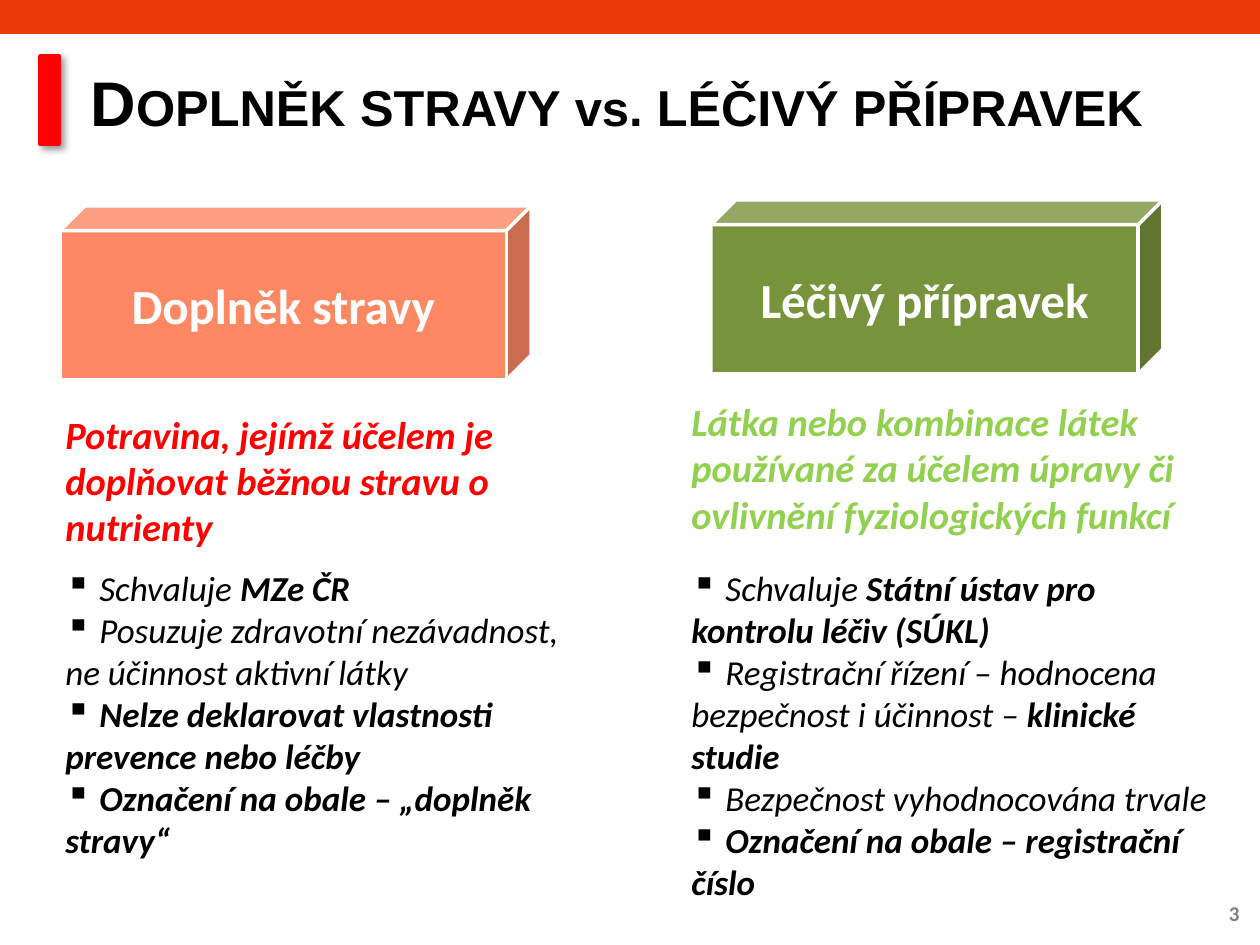
from lxml import etree
from pptx import Presentation
from pptx.dml.color import RGBColor
from pptx.enum.shapes import MSO_SHAPE as Shape
from pptx.enum.text import MSO_ANCHOR as Anchor, MSO_AUTO_SIZE as AutoSize, PP_ALIGN as Align
from pptx.oxml.ns import qn
from pptx.util import Emu, Pt

PX = 914400 / 126

BLACK = RGBColor(0x00, 0x00, 0x00)
WHITE = RGBColor(0xFF, 0xFF, 0xFF)
GRAY = RGBColor(0x80, 0x80, 0x80)
ORANGE = RGBColor(0xE9, 0x3C, 0x09)
RED = RGBColor(0xFF, 0x00, 0x00)
SALMON = RGBColor(0xFD, 0x88, 0x63)
OLIVE = RGBColor(0x77, 0x93, 0x3C)
LIME = RGBColor(0x92, 0xD0, 0x50)

# Each bullet is a plain part followed by a bold part.
SUPPLEMENT_BULLETS = [
    (" Schvaluje ", "MZe ČR"),
    (" Posuzuje zdravotní nezávadnost, ne účinnost aktivní látky", ""),
    (" ", "Nelze deklarovat vlastnosti prevence nebo léčby"),
    (" ", "Označení na obale – „doplněk stravy“"),
]
MEDICINE_BULLETS = [
    (" Schvaluje ", "Státní ústav pro kontrolu léčiv (SÚKL)"),
    (" Registrační řízení – hodnocena bezpečnost i účinnost – ", "klinické studie"),
    (" Bezpečnost vyhodnocována trvale", ""),
    (" ", "Označení na obale – registrační číslo"),
]


def px(*lengths):
    return [Emu(round(length * PX)) for length in lengths]


class SlideBuilder:
    def __init__(self, slide, font="Calibri"):
        self.slide = slide
        self.font = font

    def add_run(self, paragraph, text, size, color, bold=False, italic=False, font=None):
        run = paragraph.add_run()
        run.text = text
        run.font.name = font or self.font
        run.font.size = Pt(size)
        run.font.color.rgb = color
        run.font.bold = bold
        run.font.italic = italic
        return run

    def title(self, box, parts):
        """Fill the title from (text, size, small caps) parts."""
        shape = self.slide.shapes.title
        shape.left, shape.top, shape.width, shape.height = px(*box)
        frame = shape.text_frame
        frame.auto_size = AutoSize.NONE
        frame.vertical_anchor = Anchor.TOP
        paragraph = frame.paragraphs[0]
        paragraph.alignment = Align.LEFT
        for text, size, small_caps in parts:
            run = self.add_run(paragraph, text, size, BLACK, bold=True, font="Arial")
            if small_caps:
                run.font._element.set("cap", "small")

    def block(self, kind, box, fill, line=None):
        shape = self.slide.shapes.add_shape(kind, *px(*box))
        shape.shadow.inherit = False
        shape.fill.solid()
        shape.fill.fore_color.rgb = fill
        if line is None:
            shape.line.fill.background()
        else:
            shape.line.color.rgb = line
            shape.line.width = Pt(2)
        return shape

    def drop_shadow(self, shape):
        effects = shape._element.spPr.find(qn("a:effectLst"))
        shadow = etree.SubElement(
            effects, qn("a:outerShdw"), blurRad=str(Pt(4)), dist=str(Pt(3)),
            dir="2700000", algn="tl", rotWithShape="0")
        color = etree.SubElement(shadow, qn("a:srgbClr"), val="000000")
        etree.SubElement(color, qn("a:alpha"), val="40000")

    def cube(self, box, text, fill):
        shape = self.block(Shape.CUBE, box, fill, WHITE)
        shape.adjustments[0] = 0.142
        shape.text_frame.vertical_anchor = Anchor.MIDDLE
        paragraph = shape.text_frame.paragraphs[0]
        paragraph.alignment = Align.CENTER
        self.add_run(paragraph, text, 28, WHITE, bold=True)

    def text_frame(self, box):
        frame = self.slide.shapes.add_textbox(*px(*box)).text_frame
        frame.word_wrap = True
        return frame

    def definition(self, box, text, color):
        paragraph = self.text_frame(box).paragraphs[0]
        self.add_run(paragraph, text, 22, color, bold=True, italic=True)

    def bullets(self, box, items):
        frame = self.text_frame(box)
        for index, parts in enumerate(items):
            paragraph = frame.add_paragraph() if index else frame.paragraphs[0]
            properties = paragraph._p.get_or_add_pPr()
            etree.SubElement(properties, qn("a:buChar"), char="▪")
            for text, bold in zip(parts, (False, True)):
                if text:
                    self.add_run(paragraph, text, 20, BLACK, bold, italic=True)

    def page_number(self, box, text):
        frame = self.text_frame(box)
        frame.vertical_anchor = Anchor.MIDDLE
        paragraph = frame.paragraphs[0]
        paragraph.alignment = Align.RIGHT
        self.add_run(paragraph, text, 12, GRAY, bold=True)


def main():
    presentation = Presentation()
    presentation.slide_width, presentation.slide_height = px(1260, 945)
    slide = presentation.slides.add_slide(presentation.slide_layouts[5])
    builder = SlideBuilder(slide)

    builder.block(Shape.RECTANGLE, (0, 0, 1260, 34), ORANGE)
    builder.page_number((1166, 888, 86, 50), "3")
    builder.title((78, 57, 1142, 89), [
        ("Doplněk stravy ", 36, True),
        ("vs.", 28, False),
        (" léčivý přípravek", 36, True),
    ])
    accent = builder.block(Shape.RECTANGLE, (40, 56, 19, 88), RED, RED)
    builder.drop_shadow(accent)

    builder.cube((60, 206, 471, 174), "Doplněk stravy", SALMON)
    builder.cube((711, 200, 452, 174), "Léčivý přípravek", OLIVE)
    builder.bullets((53, 560, 552, 348), SUPPLEMENT_BULLETS)
    builder.bullets((679, 560, 552, 390), MEDICINE_BULLETS)
    builder.definition(
        (53, 405, 571, 152),
        "Potravina, jejímž účelem je doplňovat běžnou stravu o nutrienty", RED)
    builder.definition(
        (679, 392, 539, 152),
        "Látka nebo kombinace látek používané za účelem úpravy či "
        "ovlivnění fyziologických funkcí", LIME)

    presentation.save("out.pptx")


if __name__ == "__main__":
    main()
